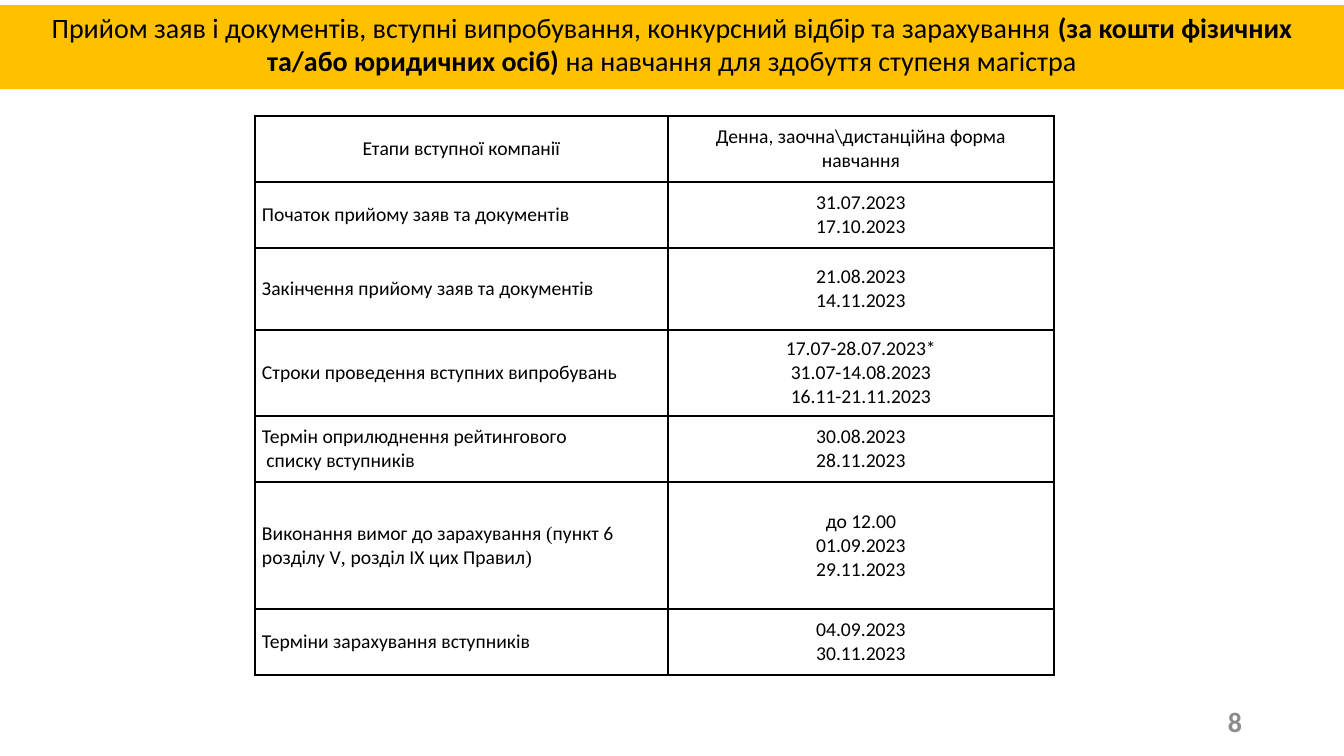
from dataclasses import dataclass

from lxml.etree import SubElement
from pptx import Presentation
from pptx.dml.color import RGBColor
from pptx.enum.text import MSO_ANCHOR as Anchor, MSO_AUTO_SIZE as AutoSize, PP_ALIGN as Align
from pptx.oxml.ns import qn
from pptx.util import Emu, Pt

BLACK, WHITE, AMBER, GREY = "000000", "FFFFFF", "FFC000", "8C8C8C"
SERIF = "Times New Roman"


@dataclass(frozen=True)
class Run:
    text: str
    font: str = "Calibri"
    bold: bool = False


@dataclass(frozen=True)
class Stage:
    height: int
    name: list[list[Run]]
    dates: list[str]
    align: Align = Align.JUSTIFY


TITLE = [
    Run("Прийом заяв і документів, вступні випробування, конкурсний відбір та зарахування "),
    Run("(за кошти фізичних та/або юридичних осіб)", bold=True),
    Run(" на навчання для здобуття ступеня магістра"),
]
COLUMN_WIDTHS = [413, 386]
STAGES = [
    Stage(66, [[Run("Етапи вступної компанії")]],
          ["Денна, заочна\\дистанційна форма навчання"], Align.CENTER),
    Stage(66, [[Run("Початок прийому заяв та документів")]], ["31.07.2023", "17.10.2023"]),
    Stage(82, [[Run("Закінчення прийому заяв та документів")]], ["21.08.2023", "14.11.2023"]),
    Stage(86, [[Run("Строки проведення вступних випробувань")]],
          ["17.07-28.07.2023*", "31.07-14.08.2023", "16.11-21.11.2023"]),
    Stage(66, [[Run("Термін оприлюднення рейтингового")], [Run(" списку вступників")]],
          ["30.08.2023", "28.11.2023"]),
    Stage(127, [[Run("Виконання вимог до зарахування "), Run("(", SERIF),
                 Run("пункт 6 розділу V"), Run(", ", SERIF),
                 Run("розділ ІХ цих Правил"), Run(")", SERIF)]],
          ["до 12.00", "01.09.2023", "29.11.2023"], Align.LEFT),
    Stage(66, [[Run("Терміни зарахування вступників")]], ["04.09.2023", "30.11.2023"]),
]


def px(n: int) -> Emu:
    return Emu(round(n * 914400 / 100.8))


def rgb(colour: str) -> RGBColor:
    return RGBColor.from_string(colour)


def write(tf, paragraphs: list[list[Run]], size: int, align: Align, colour: str = BLACK) -> None:
    for i, runs in enumerate(paragraphs):
        p = tf.add_paragraph() if i else tf.paragraphs[0]
        p.alignment = align
        for run in runs:
            r = p.add_run()
            r.text = run.text
            r.font.name, r.font.size, r.font.bold = run.font, Pt(size), run.bold
            r.font.color.rgb = rgb(colour)


def add_borders(cell) -> None:
    """Draw a thin black line on all four sides."""
    tc_pr = cell._tc.get_or_add_tcPr()
    for i, side in enumerate(("lnL", "lnR", "lnT", "lnB")):
        ln = SubElement(tc_pr, qn(f"a:{side}"), w=str(Pt(1)))
        SubElement(SubElement(ln, qn("a:solidFill")), qn("a:srgbClr"), val=BLACK)
        tc_pr.insert(i, ln)


def fill_cell(cell, paragraphs: list[list[Run]], align: Align) -> None:
    cell.margin_left = cell.margin_right = px(7)
    cell.margin_top = cell.margin_bottom = 0
    cell.vertical_anchor = Anchor.MIDDLE
    cell.fill.solid()
    cell.fill.fore_color.rgb = rgb(WHITE)
    add_borders(cell)
    write(cell.text_frame, paragraphs, 14, align)


def add_title(s) -> None:
    title = s.shapes.title
    title.left, title.top, title.width, title.height = px(0), px(5), px(1344), px(78)
    title.fill.solid()
    title.fill.fore_color.rgb = rgb(AMBER)
    tf = title.text_frame
    tf.word_wrap, tf.auto_size, tf.vertical_anchor = True, AutoSize.SHAPE_TO_FIT_TEXT, Anchor.TOP
    write(tf, [TITLE], 20, Align.CENTER)


def add_schedule(s) -> None:
    table = s.shapes.add_table(len(STAGES), len(COLUMN_WIDTHS), px(255), px(116),
                               px(sum(COLUMN_WIDTHS)),
                               px(sum(stage.height for stage in STAGES))).table
    table.first_row = table.horz_banding = False
    for column, width in zip(table.columns, COLUMN_WIDTHS):
        column.width = px(width)
    for row, stage in zip(table.rows, STAGES):
        row.height = px(stage.height)
        fill_cell(row.cells[0], stage.name, stage.align)
        fill_cell(row.cells[1], [[Run(date)] for date in stage.dates], Align.CENTER)


def add_page_number(s) -> None:
    tf = s.shapes.add_textbox(px(950), px(701), px(302), px(40)).text_frame
    tf.word_wrap, tf.vertical_anchor = True, Anchor.MIDDLE
    write(tf, [[Run("8", bold=True)]], 20, Align.RIGHT, GREY)


def main() -> None:
    prs = Presentation()
    prs.slide_width, prs.slide_height = px(1344), px(756)
    s = prs.slides.add_slide(prs.slide_layouts[5])
    add_title(s)
    add_schedule(s)
    add_page_number(s)
    prs.save("out.pptx")


if __name__ == "__main__":
    main()
